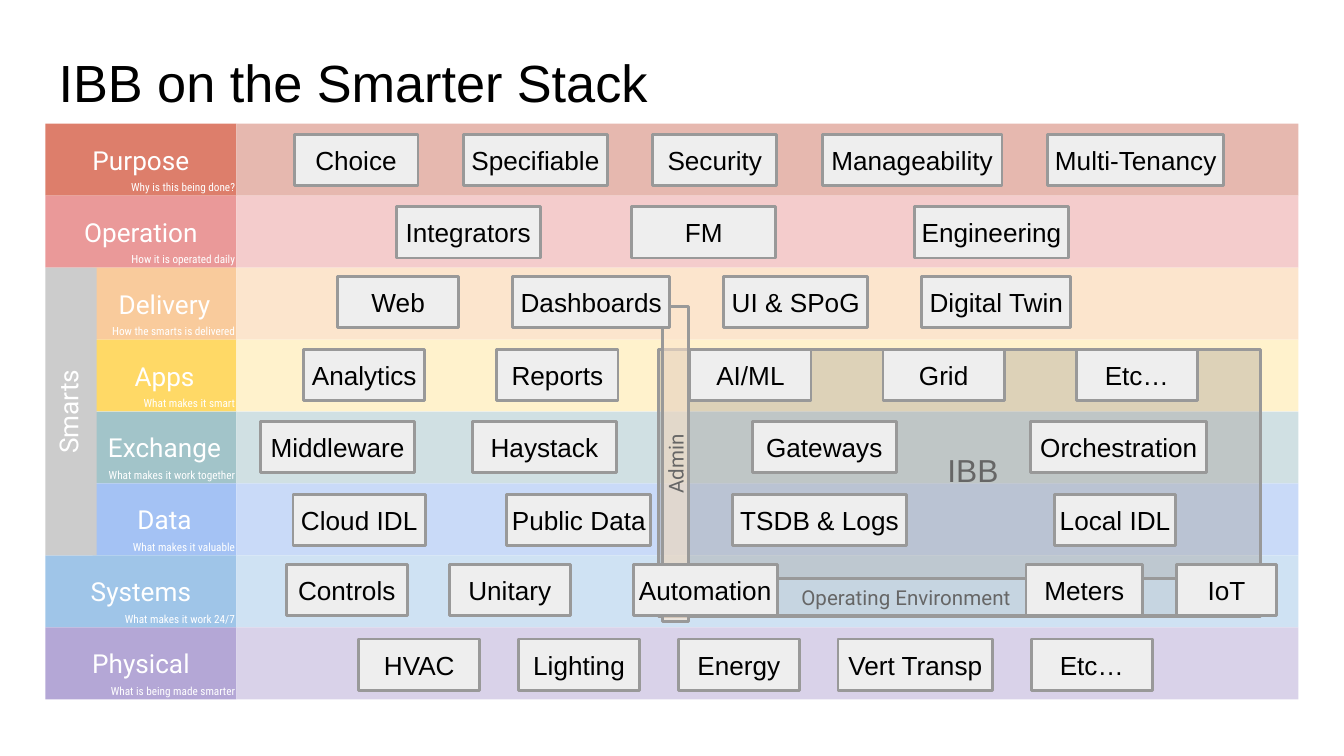
import dataclasses
import itertools

import lxml.etree
import pptx
import pptx.dml.color
import pptx.enum.shapes
import pptx.enum.text
import pptx.oxml.ns
import pptx.util
from pptx.util import Cm

ALIGN = pptx.enum.text.PP_ALIGN
ANCHOR = pptx.enum.text.MSO_ANCHOR


@dataclasses.dataclass(frozen=True)
class Theme:
    """Hold the colours, fonts and type sizes of the slide."""
    black: str = "000000"
    white: str = "FFFFFF"
    grey_text: str = "666666"
    outline: str = "999999"
    box: str = "EEEEEE"
    smarts: str = "CCCCCC"
    platform: str = "A39C96"
    environment: str = "CFE2F3"
    admin: str = "FCE5CD"
    body_font: str = "Arial"
    label_font: str = "Roboto"
    tagline_font: str = "Roboto Condensed"
    title_size: float = 28
    platform_size: float = 17
    label_size: float = 14
    overlay_size: float = 11
    tagline_size: float = 6
    outline_width: float = 1.5


@dataclasses.dataclass(frozen=True)
class Layer:
    """Describe one layer of the stack; lengths are in centimetres."""
    name: str
    tagline: str
    dark: str
    light: str
    box_top: float
    box_left: float
    gaps: tuple
    boxes: tuple


THEME = Theme()
STACK_LEFT, STACK_TOP, LAYER_HEIGHT = 0.86, 2.34, 1.36
SMARTS_WIDTH, LABEL_RIGHT, BAND_WIDTH = 0.97, 4.47, 20.07
SMART_LAYERS = range(2, 6)
SMARTS_LABEL_LEFT = 1.75
TAGLINE_LEFT, TAGLINE_WIDTH = 1.57, 2.92
BOX_HEIGHT = 0.97

LAYERS = (
    Layer("Purpose", "Why is this being done?", "DD7E6B", "E6B8AF", 2.54, 5.56, (0.86,),
          (("Choice", 2.34), ("Specifiable", 2.72), ("Security", 2.34),
           ("Manageability", 3.4), ("Multi-Tenancy", 3.33))),
    Layer("Operation", "How it is operated daily", "EA9999", "F4CCCC", 3.91, 7.49, (1.73, 2.62),
          (("Integrators", 2.72), ("FM", 2.72), ("Engineering", 2.92))),
    Layer("Delivery", "How the smarts is delivered", "F9CB9C", "FCE5CD", 5.23, 6.38, (1.02,),
          (("Web", 2.29), ("Dashboards", 2.97), ("UI & SPoG", 2.72), ("Digital Twin", 2.82))),
    Layer("Apps", "What makes it smart", "FFD966", "FFF2CC", 6.6, 5.74, (1.36,),
          (("Analytics", 2.29), ("Reports", 2.29), ("AI/ML", 2.29), ("Grid", 2.29),
           ("Etc…", 2.29))),
    Layer("Exchange", "What makes it work together", "A2C4C9", "D0E0E3", 7.97, 4.92,
          (1.09, 2.57, 2.54),
          (("Middleware", 2.92), ("Haystack", 2.72), ("Gateways", 2.72),
           ("Orchestration", 3.33))),
    Layer("Data", "What makes it valuable", "A4C2F4", "C9DAF8", 9.35, 5.54, (1.54, 1.54, 2.79),
          (("Cloud IDL", 2.5), ("Public Data", 2.72), ("TSDB & Logs", 3.3),
           ("Local IDL", 2.29))),
    Layer("Systems", "What makes it work 24/7", "9FC5E8", "CFE2F3", 10.67, 5.41,
          (0.79, 1.19, 4.7, 0.63),
          (("Controls", 2.29), ("Unitary", 2.29), ("Automation", 2.72), ("Meters", 2.21),
           ("IoT", 1.9))),
    Layer("Physical", "What is being made smarter", "B4A7D6", "D9D2E9", 12.08, 6.78, (0.73,),
          (("HVAC", 2.29), ("Lighting", 2.29), ("Energy", 2.29), ("Vert Transp", 2.92),
           ("Etc…", 2.29))),
)


def rgb(color):
    """Turn a hex string into a colour."""
    return pptx.dml.color.RGBColor.from_string(color)


def write_text(shape, text, font, size, color, align=ALIGN.CENTER,
               anchor=ANCHOR.MIDDLE, insets=(0, 0, 0, 0)):
    """Write one styled paragraph; insets run left, top, right, bottom."""
    frame = shape.text_frame
    frame.word_wrap = True
    frame.vertical_anchor = anchor
    frame.margin_left, frame.margin_top, frame.margin_right, frame.margin_bottom = map(Cm, insets)
    paragraph = frame.paragraphs[0]
    paragraph.text = text
    paragraph.alignment = align
    paragraph.font.name = font
    paragraph.font.size = pptx.util.Pt(size)
    paragraph.font.color.rgb = rgb(color)


def add_rectangle(slide, left, top, width, height, fill, outlined=False, opacity=None):
    """Add a flat rectangle, optionally outlined or see-through."""
    shape = slide.shapes.add_shape(pptx.enum.shapes.MSO_SHAPE.RECTANGLE,
                                   Cm(left), Cm(top), Cm(width), Cm(height))
    shape.shadow.inherit = False
    shape.fill.solid()
    shape.fill.fore_color.rgb = rgb(fill)
    if outlined:
        shape.line.color.rgb = rgb(THEME.outline)
        shape.line.width = pptx.util.Pt(THEME.outline_width)
    else:
        shape.line.fill.background()
    if opacity is not None:
        qn = pptx.oxml.ns.qn
        color = shape.fill._xPr.find(qn("a:solidFill")).find(qn("a:srgbClr"))
        lxml.etree.SubElement(color, qn("a:alpha"), val=str(opacity * 1000))
    return shape


def add_text_box(slide, left, top, width, height, *text, **layout):
    """Add a text box holding one paragraph."""
    shape = slide.shapes.add_textbox(Cm(left), Cm(top), Cm(width), Cm(height))
    write_text(shape, *text, **layout)


def add_bands(slide):
    """Add the label, the coloured band and the tagline of every layer."""
    for index, layer in enumerate(LAYERS):
        top = STACK_TOP + index * LAYER_HEIGHT
        left = SMARTS_LABEL_LEFT if index in SMART_LAYERS else STACK_LEFT
        label = add_rectangle(slide, left, top, LABEL_RIGHT - left, LAYER_HEIGHT, layer.dark)
        write_text(label, layer.name, THEME.label_font, THEME.label_size, THEME.white,
                   insets=(0.25,) * 4)
        add_rectangle(slide, LABEL_RIGHT, top, BAND_WIDTH, LAYER_HEIGHT, layer.light)
        add_text_box(slide, TAGLINE_LEFT, top, TAGLINE_WIDTH, LAYER_HEIGHT, layer.tagline,
                     THEME.tagline_font, THEME.tagline_size, THEME.white,
                     align=ALIGN.RIGHT, anchor=ANCHOR.BOTTOM, insets=(0.05, 0.05, 0.05, 0.03))


def add_upright(slide, left, top, width, height, fill, **style):
    """Add a rectangle that reads upwards, given by its place on the slide."""
    shift = (height - width) / 2
    shape = add_rectangle(slide, left - shift, top + shift, height, width, fill, **style)
    shape.rotation = 270
    return shape


def add_smarts(slide):
    """Add the bar that joins the smart layers."""
    smarts = add_upright(slide, STACK_LEFT, STACK_TOP + SMART_LAYERS.start * LAYER_HEIGHT,
                         SMARTS_WIDTH, len(SMART_LAYERS) * LAYER_HEIGHT, THEME.smarts)
    write_text(smarts, "Smarts", THEME.label_font, THEME.label_size, THEME.white,
               anchor=ANCHOR.TOP, insets=(0, 0.13, 0, 0.25))


def add_overlays(slide):
    """Add the see-through platform, environment and admin areas."""
    platform = add_rectangle(slide, 12.45, 6.6, 11.38, 5.05, THEME.platform, True, 37)
    write_text(platform, "IBB", THEME.body_font, THEME.platform_size, THEME.grey_text,
               insets=(0.5, 0, 0, 0.5))
    environment = add_rectangle(slide, 12.45, 10.94, 11.38, 0.7, THEME.environment, True, 50)
    write_text(environment, "Operating Environment", THEME.label_font, THEME.overlay_size,
               THEME.grey_text, insets=(0, 0, 2.03, 0))
    admin = add_upright(slide, 12.52, 5.79, 0.5, 5.97, THEME.admin, outlined=True, opacity=59)
    admin.left, admin.top, admin.width, admin.height = Cm(10.61), Cm(8.43), Cm(4.32), Cm(0.69)
    admin.left, admin.top, admin.width, admin.height = Cm(9.78), Cm(8.52), Cm(5.97), Cm(0.5)
    write_text(admin, "Admin", THEME.label_font, THEME.overlay_size, THEME.grey_text)


def add_boxes(slide):
    """Lay out the boxes of every layer from left to right."""
    for layer in LAYERS:
        left = layer.box_left
        for (text, width), gap in zip(layer.boxes, itertools.cycle(layer.gaps)):
            box = add_rectangle(slide, left, layer.box_top, width, BOX_HEIGHT, THEME.box, True)
            write_text(box, text, THEME.body_font, THEME.label_size, THEME.black)
            left += width + gap


def main():
    """Build the slide and save it."""
    presentation = pptx.Presentation()
    presentation.slide_width, presentation.slide_height = Cm(25.4), Cm(14.29)
    slide = presentation.slides.add_slide(presentation.slide_layouts[6])
    add_bands(slide)
    add_smarts(slide)
    add_text_box(slide, 0.86, 0.61, 19.99, 1.6, "IBB on the Smarter Stack",
                 THEME.body_font, THEME.title_size, THEME.black,
                 align=ALIGN.LEFT, anchor=ANCHOR.TOP, insets=(0.25, 0.34, 0.25, 0.25))
    add_overlays(slide)
    add_boxes(slide)
    presentation.save("out.pptx")


if __name__ == "__main__":
    main()
